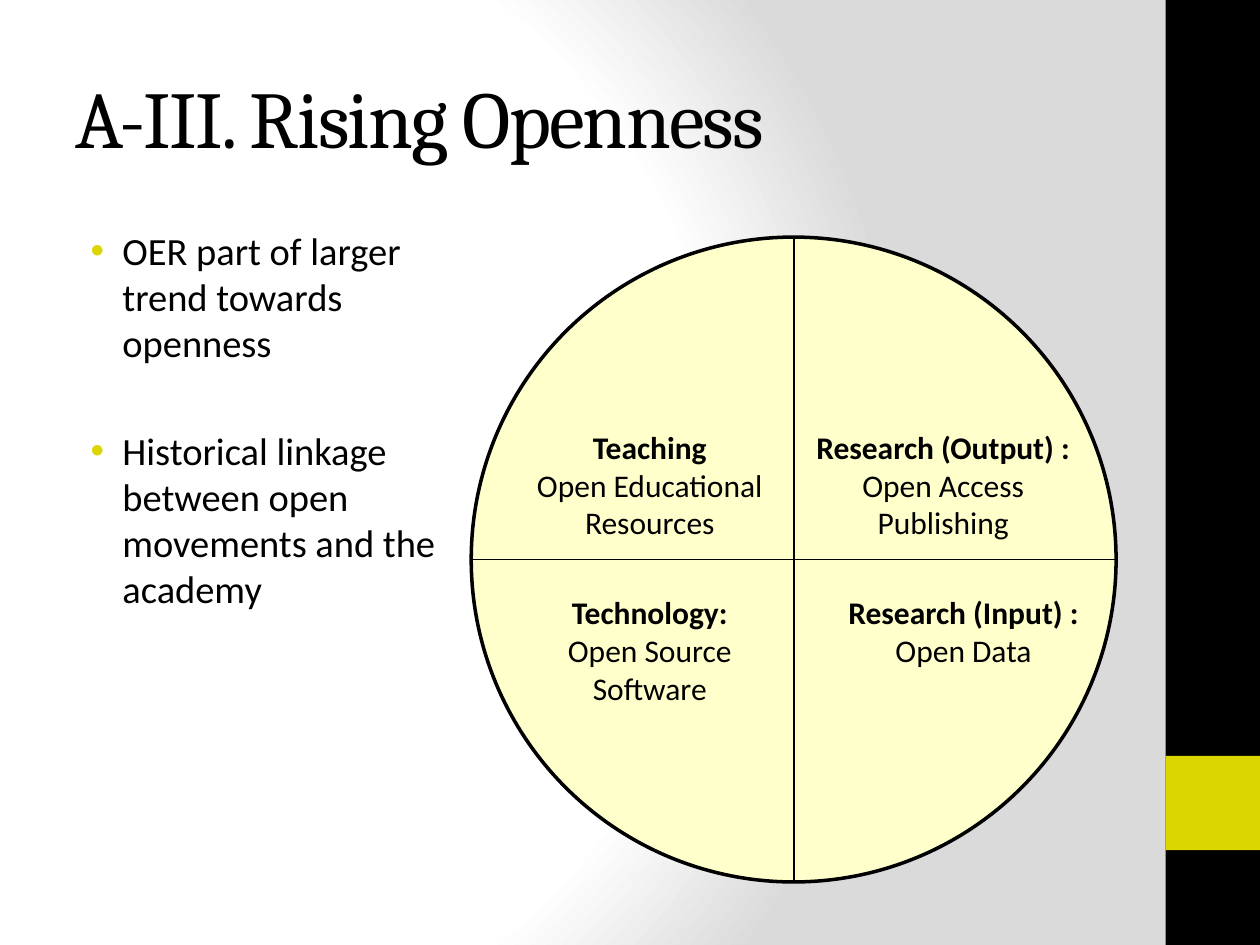
from dataclasses import dataclass

from lxml import etree
from pptx import Presentation
from pptx.dml.color import RGBColor
from pptx.enum.shapes import MSO_CONNECTOR, MSO_SHAPE
from pptx.enum.text import MSO_ANCHOR, PP_ALIGN
from pptx.oxml import parse_xml
from pptx.oxml.ns import nsdecls, qn
from pptx.util import Cm, Pt

RECTANGLE, ELLIPSE = MSO_SHAPE.RECTANGLE, MSO_SHAPE.OVAL
STRAIGHT = MSO_CONNECTOR.STRAIGHT
TOP, MIDDLE = MSO_ANCHOR.TOP, MSO_ANCHOR.MIDDLE
CENTER = PP_ALIGN.CENTER

COLORS = {
    "black": "000000",
    "white": "FFFFFF",
    "gray": "DADADA",
    "accent": "DBD600",
    "cream": "FFFFCC",
}
HEADING_FONT, BODY_FONT = "Cambria", "Calibri"
SLIDE_WIDTH, SLIDE_HEIGHT = 25.4, 19.05
SIDEBAR_LEFT, SIDEBAR_WIDTH = 23.5, 1.9
CIRCLE_LEFT, CIRCLE_TOP, CIRCLE_SIZE = 9.5, 4.78, 13.0


@dataclass(frozen=True)
class Box:
    """Position and size in centimetres."""
    left: float
    top: float
    width: float
    height: float

    def lengths(self) -> tuple:
        return Cm(self.left), Cm(self.top), Cm(self.width), Cm(self.height)


@dataclass(frozen=True)
class Quadrant:
    heading: str
    detail: str
    box: Box


QUADRANTS = [
    Quadrant("Teaching", "Open Educational Resources", Box(10.5, 8.5, 5.2, 2.57)),
    Quadrant("Research (Output) :", "Open Access Publishing", Box(16.13, 8.5, 5.77, 2.57)),
    Quadrant("Technology:", "Open Source Software", Box(10.5, 11.84, 5.2, 2.57)),
    Quadrant("Research (Input) :", "Open Data", Box(16.54, 11.84, 5.77, 1.8)),
]
BULLETS = [
    "OER part of larger trend towards openness",
    "Historical linkage between open movements and the academy",
]


def color(name: str) -> RGBColor:
    return RGBColor.from_string(COLORS[name])


def set_background(slide) -> None:
    """Give the slide a circular gradient, which needs XML."""
    slide.background.fill.gradient()
    gradient = slide.background._cSld.find(".//" + qn("a:gradFill"))
    stops = "".join(
        f'<a:gs pos="{position * 1000}"><a:srgbClr val="{COLORS[name]}"/></a:gs>'
        for position, name in [(0, "white"), (75, "white"), (100, "gray")]
    )
    gradient.getparent().replace(gradient, parse_xml(
        f'<a:gradFill {nsdecls("a")} rotWithShape="1"><a:gsLst>{stops}</a:gsLst>'
        '<a:path path="circle"><a:fillToRect l="20000" t="50000" r="100000" b="50000"/>'
        '</a:path></a:gradFill>'
    ))


def add_filled_shape(slide, kind, box: Box, fill: str, line_width: float = 0) -> None:
    shape = slide.shapes.add_shape(kind, *box.lengths())
    shape.shadow.inherit = False
    shape.fill.solid()
    shape.fill.fore_color.rgb = color(fill)
    if line_width:
        shape.line.color.rgb = color("black")
        shape.line.width = Pt(line_width)
    else:
        shape.line.fill.background()


def add_line(slide, x1: float, y1: float, x2: float, y2: float) -> None:
    connector = slide.shapes.add_connector(STRAIGHT, Cm(x1), Cm(y1), Cm(x2), Cm(y2))
    connector.line.color.rgb = color("black")
    connector.line.width = Pt(1)
    etree.SubElement(connector._element.spPr, qn("a:effectLst"))


def add_text_frame(slide, box: Box, anchor=TOP):
    text_frame = slide.shapes.add_textbox(*box.lengths()).text_frame
    text_frame.word_wrap = True
    text_frame.vertical_anchor = anchor
    return text_frame


def next_paragraph(text_frame, index: int):
    return text_frame.add_paragraph() if index else text_frame.paragraphs[0]


def add_run(paragraph, text: str, size: float, font: str = BODY_FONT, bold: bool = False):
    run = paragraph.add_run()
    run.text = text
    run.font.size = Pt(size)
    run.font.name = font
    run.font.bold = bold
    run.font.color.rgb = color("black")
    return run


def add_bullet(paragraph) -> None:
    properties = paragraph._p.get_or_add_pPr()
    properties.set("marL", str(Cm(0.95)))
    properties.set("indent", str(Cm(-0.64)))
    bullet_color = etree.SubElement(properties, qn("a:buClr"))
    etree.SubElement(bullet_color, qn("a:srgbClr"), val=COLORS["accent"])
    etree.SubElement(properties, qn("a:buFont"), typeface="Arial")
    etree.SubElement(properties, qn("a:buChar"), char="•")


def add_title(slide) -> None:
    text_frame = add_text_frame(slide, Box(1.27, 0.76, 21.16, 3.18), MIDDLE)
    run = add_run(text_frame.paragraphs[0], "A-III. Rising Openness", 46, HEADING_FONT)
    run.font._element.set("spc", "-100")


def add_bullets(slide) -> None:
    text_frame = add_text_frame(slide, Box(1.27, 4.45, 8.43, 13.33))
    for index, text in enumerate(BULLETS):
        paragraph = next_paragraph(text_frame, index)
        paragraph.space_before = Pt(35 if index else 4.4)
        add_bullet(paragraph)
        add_run(paragraph, text, 22)


def add_quadrant(slide, quadrant: Quadrant) -> None:
    text_frame = add_text_frame(slide, quadrant.box)
    for index, text in enumerate([quadrant.heading, quadrant.detail]):
        paragraph = next_paragraph(text_frame, index)
        paragraph.alignment = CENTER
        add_run(paragraph, text, 18, bold=index == 0)


def add_circle(slide) -> None:
    """Draw the circle, its two dividing lines and the four labels."""
    right, bottom = CIRCLE_LEFT + CIRCLE_SIZE, CIRCLE_TOP + CIRCLE_SIZE
    center_x, center_y = CIRCLE_LEFT + CIRCLE_SIZE / 2, CIRCLE_TOP + CIRCLE_SIZE / 2
    circle = Box(CIRCLE_LEFT, CIRCLE_TOP, CIRCLE_SIZE, CIRCLE_SIZE)
    add_filled_shape(slide, ELLIPSE, circle, "cream", 2)
    add_line(slide, center_x, CIRCLE_TOP, center_x, bottom)
    add_line(slide, CIRCLE_LEFT, center_y, right, center_y)
    for quadrant in QUADRANTS:
        add_quadrant(slide, quadrant)


def main() -> None:
    presentation = Presentation()
    presentation.slide_width = Cm(SLIDE_WIDTH)
    presentation.slide_height = Cm(SLIDE_HEIGHT)
    slide = presentation.slides.add_slide(presentation.slide_layouts[6])
    set_background(slide)
    sidebar = Box(SIDEBAR_LEFT, 0, SIDEBAR_WIDTH, SLIDE_HEIGHT)
    add_filled_shape(slide, RECTANGLE, sidebar, "black")
    accent = Box(SIDEBAR_LEFT, 15.24, SIDEBAR_WIDTH, SIDEBAR_WIDTH)
    add_filled_shape(slide, RECTANGLE, accent, "accent")
    add_title(slide)
    add_bullets(slide)
    add_circle(slide)
    presentation.save("out.pptx")


if __name__ == "__main__":
    main()
